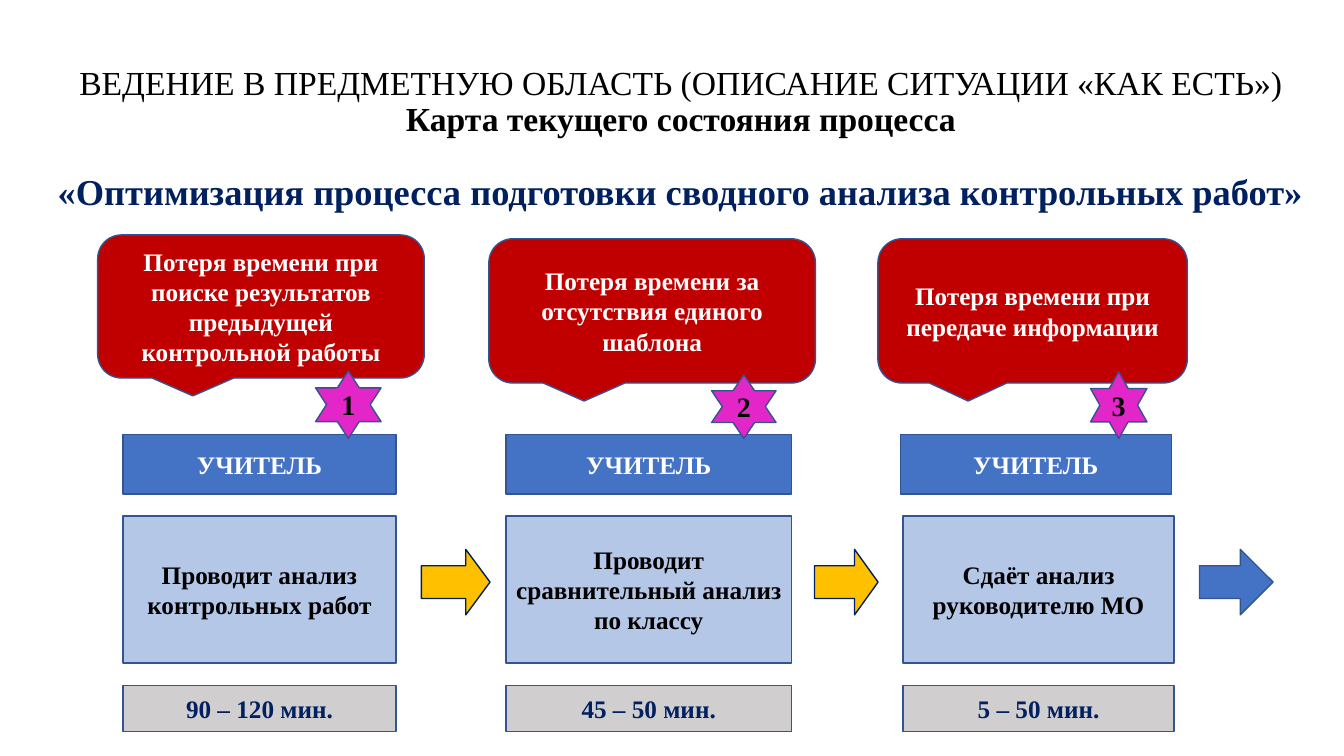
from dataclasses import dataclass

from pptx import Presentation
from pptx.dml.color import RGBColor
from pptx.enum.shapes import MSO_SHAPE
from pptx.enum.text import MSO_ANCHOR, PP_ALIGN
from pptx.util import Pt

RECT = MSO_SHAPE.RECTANGLE
CALLOUT = MSO_SHAPE.ROUNDED_RECTANGULAR_CALLOUT
STAR = MSO_SHAPE.STAR_6_POINT
ARROW = MSO_SHAPE.RIGHT_ARROW
CENTER = PP_ALIGN.CENTER
MIDDLE = MSO_ANCHOR.MIDDLE


@dataclass(frozen=True)
class Theme:
    """Colours, font and type sizes of the slide."""
    font: str = "Times New Roman"
    black: str = "000000"
    white: str = "FFFFFF"
    navy: str = "002060"
    edge: str = "325491"
    problem: str = "C00000"
    role: str = "4472C4"
    step: str = "B4C7E7"
    time: str = "D0CECE"
    badge: str = "E226C7"
    arrow: str = "FFC000"
    heading: int = 24
    topic: int = 26
    body: int = 18
    number: int = 20


THEME = Theme()


def style_text(p, text, size, color, bold=True):
    """Fill a centred paragraph and set its font."""
    p.text = text
    p.alignment = CENTER
    p.font.name = THEME.font
    p.font.size = Pt(size)
    p.font.bold = bold
    p.font.color.rgb = RGBColor.from_string(color)


def add_block(s, kind, box, fill, line=THEME.edge):
    """Add a filled, outlined preset shape in a box given in points."""
    sp = s.shapes.add_shape(kind, *(Pt(v) for v in box))
    sp.shadow.inherit = False
    sp.fill.solid()
    sp.fill.fore_color.rgb = RGBColor.from_string(fill)
    sp.line.color.rgb = RGBColor.from_string(line)
    sp.line.width = Pt(1)
    return sp


def add_label(s, kind, box, fill, text, color, size=THEME.body):
    """Add a shape with bold centred text."""
    sp = add_block(s, kind, box, fill)
    tf = sp.text_frame
    tf.word_wrap = True
    tf.vertical_anchor = MIDDLE
    style_text(tf.paragraphs[0], text, size, color)


def add_title(s, box):
    """Add the three-line heading."""
    tf = s.shapes.add_textbox(*(Pt(v) for v in box)).text_frame
    tf.word_wrap = True
    tf.vertical_anchor = MIDDLE
    lines = [
        ("ВЕДЕНИЕ В ПРЕДМЕТНУЮ ОБЛАСТЬ (ОПИСАНИЕ СИТУАЦИИ «КАК ЕСТЬ»)",
         THEME.heading, THEME.black, False),
        ("Карта текущего состояния процесса", THEME.heading, THEME.black, True),
        ("«Оптимизация процесса подготовки сводного анализа контрольных работ»",
         THEME.topic, THEME.navy, True),
    ]
    for i, line in enumerate(lines):
        p = tf.add_paragraph() if i else tf.paragraphs[0]
        style_text(p, *line)
        p.line_spacing = 0.9
    p.space_before = Pt(25)


def add_problem(s, box, text):
    """Add the red callout naming a loss of time."""
    add_label(s, CALLOUT, box, THEME.problem, text, THEME.white)


def add_stage(s, box, shift, step, time):
    """Stack role, step and duration; shift offsets the lower two."""
    x, y, w, h = box
    add_label(s, RECT, (x, y, w, 42.5), THEME.role, "УЧИТЕЛЬ", THEME.white)
    add_label(s, RECT, (x + shift, y + 58.3, w, 105.1), THEME.step, step, THEME.black)
    add_label(s, RECT, (x + shift, y + h - 33.1, w, 33.1), THEME.time, time, THEME.navy)


def add_arrow(s, box, fill, line, head=0.5):
    """Add an arrow leading out of a stage."""
    sp = add_block(s, ARROW, box, fill, line)
    sp.adjustments[1] = head


def main():
    """Build and save the process map."""
    prs = Presentation()
    prs.slide_width, prs.slide_height = Pt(960), Pt(540)
    s = prs.slides.add_slide(prs.slide_layouts[6])
    add_title(s, (24.5, 28.8, 923.8, 141.8))

    problems = [
        ((69.8, 167.8, 233.3, 102.2),
         "Потеря времени при поиске результатов предыдущей контрольной работы"),
        ((349.2, 170.6, 233.3, 103), "Потеря времени за отсутствия единого шаблона"),
        ((627.1, 170.6, 221, 103), "Потеря времени при передаче информации"),
    ]
    for box, text in problems:
        add_problem(s, box, text)

    stages = [
        (87.8, 195.1, 0, "Проводит анализ контрольных работ", "90 – 120 мин."),
        (361.4, 204, 0, "Проводит сравнительный анализ по классу", "45 – 50 мин."),
        (643, 193.7, 2, "Сдаёт анализ руководителю МО", "5 – 50 мин."),
    ]
    for x, w, shift, step, time in stages:
        add_stage(s, (x, 310.3, w, 212.4), shift, step, time)

    for x, w in [(301, 49), (581.8, 45.4)]:
        add_arrow(s, (x, 392.4, w, 46.8), THEME.arrow, THEME.navy, 0.37)
    add_arrow(s, (856.8, 392.4, 52.6, 46.8), THEME.role, THEME.edge)

    badges = [(225.4, 265, 46.8, 48.2), (508.3, 267.8, 46.1, 45.4), (779, 265.7, 40.3, 47.5)]
    for number, box in enumerate(badges, 1):
        add_label(s, STAR, box, THEME.badge, str(number), THEME.black, THEME.number)

    prs.save("out.pptx")


if __name__ == "__main__":
    main()
